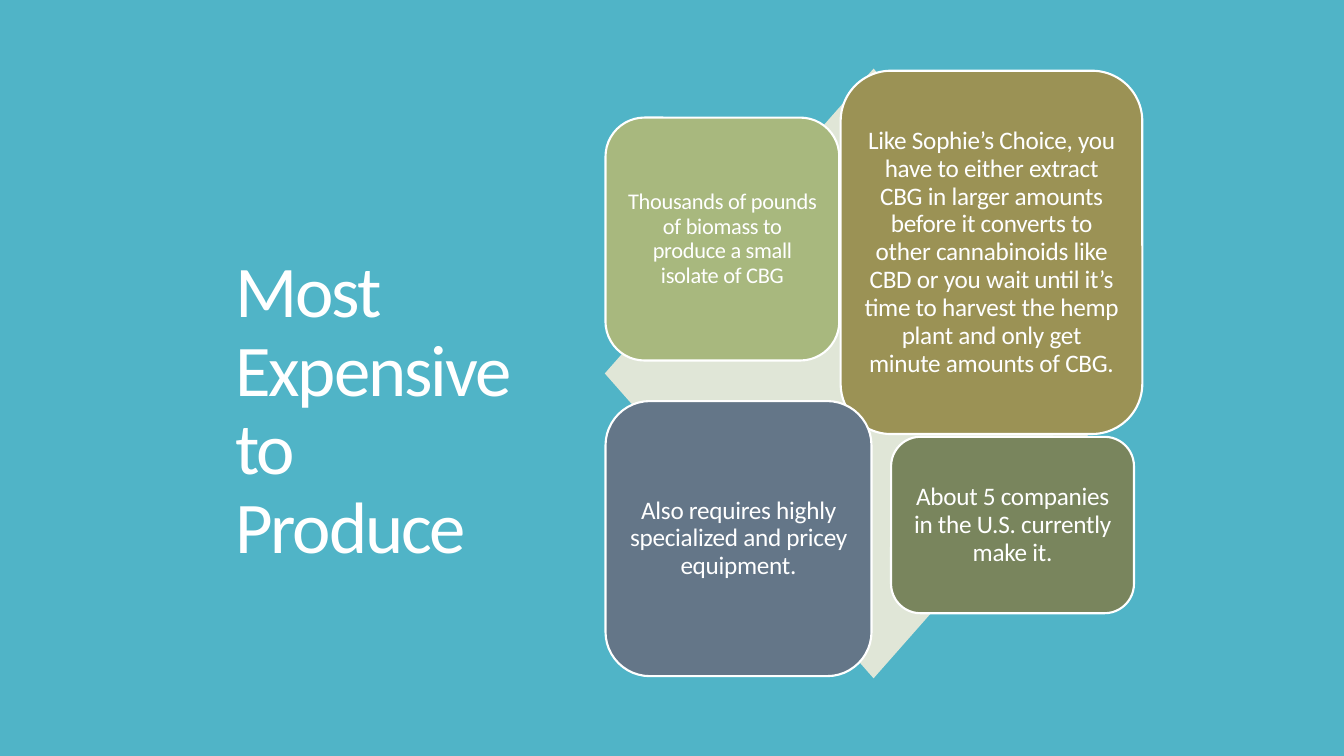
from pptx import Presentation
from pptx.dml.color import RGBColor as RGB
from pptx.enum.shapes import MSO_SHAPE as Shape
from pptx.enum.text import MSO_ANCHOR as Anchor, PP_ALIGN as Align
from pptx.util import Pt

HUES = {
    "teal": "50B4C7", "mist": "E0E6D7", "white": "FFFFFF", "sage": "A8B87E",
    "olive": "9B9255", "slate": "647688", "moss": "79855D",
}
CARDS = [
    ("sage", (432.5, 84, 167, 173.5), 16,
     "Thousands of pounds of biomass to produce a small isolate of CBG"),
    ("olive", (600.5, 50.5, 215.5, 259.5), 18,
     "Like Sophie’s Choice, you have to either extract CBG in larger amounts "
     "before it converts to other cannabinoids like CBD or you wait until it’s "
     "time to harvest the hemp plant and only get minute amounts of CBG."),
    ("slate", (432.5, 286.5, 190, 196.5), 18,
     "Also requires highly specialized and pricey equipment."),
    ("moss", (636.5, 312, 173.5, 126), 18,
     "About 5 companies in the U.S. currently make it."),
]


class Deck:
    """Draws styled elements on one slide."""

    def __init__(self, wide, high):
        self.show = Presentation()
        self.show.slide_width, self.show.slide_height = Pt(wide), Pt(high)
        self.slide = self.show.slides.add_slide(self.show.slide_layouts[6])
        self.font = "Calibri"

    def hue(self, name):
        return RGB.from_string(HUES[name])

    def form(self, kind, box, fill):
        item = self.slide.shapes.add_shape(kind, *map(Pt, box))
        item.shadow.inherit = False
        item.fill.solid()
        item.fill.fore_color.rgb = self.hue(fill)
        item.line.fill.background()
        return item

    def label(self, frame, text, size, align, lead, track, pad):
        frame.word_wrap = True
        frame.margin_left = frame.margin_right = Pt(pad)
        frame.margin_top = frame.margin_bottom = Pt(pad)
        para = frame.paragraphs[0]
        para.text = text
        para.alignment = align
        para.line_spacing = lead
        para.font.name, para.font.size = self.font, Pt(size)
        para.font.color.rgb = self.hue("white")
        props = para._p.get_or_add_pPr().get_or_add_defRPr()
        props.set("spc", str(round(track * 100)))

    def title(self, box, text):
        frame = self.slide.shapes.add_textbox(*map(Pt, box)).text_frame
        self.label(frame, text, 52, Align.LEFT, Pt(56.2), -1.5, 0)

    def card(self, fill, box, size, text):
        item = self.form(Shape.ROUNDED_RECTANGLE, box, fill)
        item.line.color.rgb = self.hue("white")
        item.line.width = Pt(1.5)
        item.text_frame.vertical_anchor = Anchor.MIDDLE
        self.label(item.text_frame, text, size, Align.CENTER, 0.92, -0.2, 6)


def main():
    deck = Deck(960, 540)
    deck.form(Shape.RECTANGLE, (0, 0, 960, 540), "teal")
    deck.title((168, 181, 212, 225), "Most Expensive to Produce")
    deck.form(Shape.DIAMOND, (432, 49, 384, 435.5), "mist")
    for card in CARDS:
        deck.card(*card)
    deck.show.save("out.pptx")


if __name__ == "__main__":
    main()
